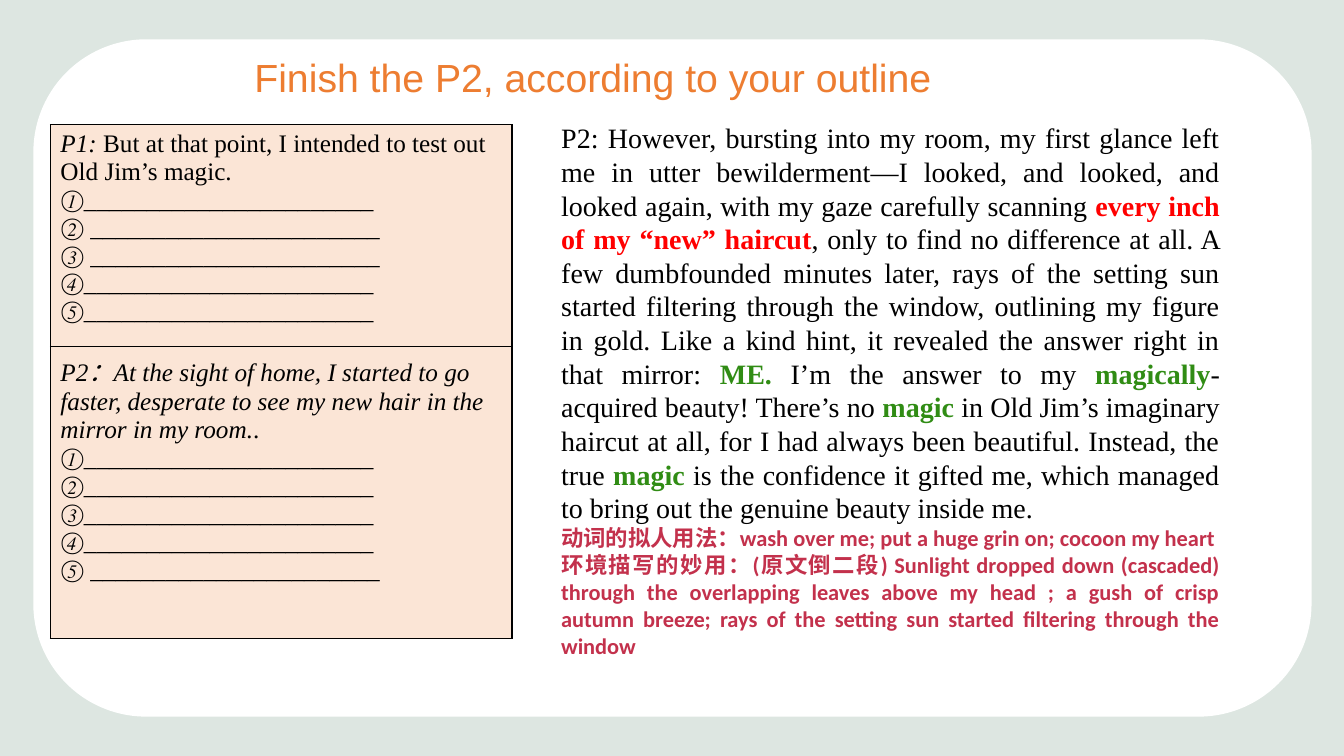
from lxml import etree
from pptx import Presentation
from pptx.dml.color import RGBColor
from pptx.enum import shapes, text
from pptx.oxml import ns
from pptx.util import Pt

PALE_GREEN = RGBColor(0xDD, 0xE6, 0xE1)
WHITE = RGBColor(0xFF, 0xFF, 0xFF)
BLACK = RGBColor(0, 0, 0)
ORANGE = RGBColor(0xED, 0x7D, 0x31)
PEACH = RGBColor(0xFB, 0xE5, 0xD6)
RED = RGBColor(0xFF, 0, 0)
GREEN = RGBColor(0x30, 0x8C, 0x14)
CRIMSON = RGBColor(0xC3, 0x31, 0x4C)
SERIF = "Times New Roman"
BLANK = "_" * 23


def set_font(font, name, size, color):
    font.name = name
    font.size = Pt(size)
    font.color.rgb = color


def add_border(cell):
    """Draw a 1 pt black line on all four sides of a cell."""
    properties = cell._tc.get_or_add_tcPr()
    for index, side in enumerate(("lnL", "lnR", "lnT", "lnB")):
        line = etree.Element(ns.qn(f"a:{side}"), w=str(Pt(1)))
        fill = etree.SubElement(line, ns.qn("a:solidFill"))
        etree.SubElement(fill, ns.qn("a:srgbClr"), val=str(BLACK))
        properties.insert(index, line)


presentation = Presentation()
presentation.slide_width = Pt(960)
presentation.slide_height = Pt(540)
slide = presentation.slides.add_slide(presentation.slide_layouts[5])
slide.background.fill.solid()
slide.background.fill.fore_color.rgb = PALE_GREEN

# White panel
panel = slide.shapes.add_shape(
    shapes.MSO_SHAPE.ROUNDED_RECTANGLE, Pt(23.8), Pt(28.1), Pt(913), Pt(483.8))
panel.shadow.inherit = False
panel.fill.solid()
panel.fill.fore_color.rgb = WHITE
panel.line.fill.background()

# Title, in front of the panel
title = slide.shapes.title
slide.shapes._spTree.append(title._element)
title.left, title.top, title.width, title.height = Pt(23.8), Pt(33.8), Pt(799.2), Pt(42.5)
title.text_frame.text = "Finish the P2, according to your outline"
title.text_frame.vertical_anchor = text.MSO_ANCHOR.MIDDLE
title_paragraph = title.text_frame.paragraphs[0]
title_paragraph.alignment = text.PP_ALIGN.CENTER
set_font(title_paragraph.font, "Arial", 28, ORANGE)

# Outline table: (opening runs as (text, italic), numbered marks), row height
outline = [
    ([("P1: ", True),
      ("But at that point, I intended to test out Old Jim’s magic.", False)],
     ["①", "② ", "③ ", "④", "⑤"], 158.5),
    ([("P2：At the sight of home, I started to go faster, desperate to see "
       "my new hair in the mirror in my room.", True), (".", False)],
     ["①", "②", "③", "④", "⑤ "], 208.5),
]
table = slide.shapes.add_table(2, 1, Pt(36), Pt(89.2), Pt(329.8), Pt(367)).table
table.first_row = False
table.horz_banding = False
for row, (opening, marks, height) in zip(table.rows, outline):
    row.height = Pt(height)
    cell = row.cells[0]
    cell.fill.solid()
    cell.fill.fore_color.rgb = PEACH
    add_border(cell)
    paragraph = cell.text_frame.paragraphs[0]
    set_font(paragraph.font, SERIF, 18, BLACK)
    for words, italic in opening:
        run = paragraph.add_run()
        run.text = words
        set_font(run.font, SERIF, 18, BLACK)
        run.font.italic = italic
    for mark in marks:
        paragraph = cell.text_frame.add_paragraph()
        paragraph.text = mark + BLANK
        set_font(paragraph.font, SERIF, 18, BLACK)
        paragraph.font.italic = True

# Sample paragraph and language notes
sample = [
    ("P2: However, bursting into my room, my first glance left me in utter "
     "bewilderment—I looked, and looked, and looked again, with my gaze "
     "carefully scanning ", BLACK),
    ("every inch of my “new” haircut", RED),
    (", only to find no difference at all. A few dumbfounded minutes later, "
     "rays of the setting sun started filtering through the window, outlining "
     "my figure in gold. Like a kind hint, it revealed the answer right in "
     "that mirror: ", BLACK),
    ("ME. ", GREEN),
    ("I’m the answer to my ", BLACK),
    ("magically", GREEN),
    ("-acquired beauty! There’s no ", BLACK),
    ("magic ", GREEN),
    ("in Old Jim’s imaginary haircut at all, for I had always been beautiful. "
     "Instead, the true ", BLACK),
    ("magic ", GREEN),
    ("is the confidence it gifted me, which managed to bring out the genuine "
     "beauty inside me.", BLACK),
]
notes = [
    "动词的拟人用法：wash over me; put a huge grin on; cocoon my heart",
    "环境描写的妙用：(原文倒二段) Sunlight dropped down (cascaded) through the "
    "overlapping leaves above my head ; a gush of crisp autumn breeze; rays of "
    "the setting sun started filtering through the window",
]
essay = slide.shapes.add_textbox(Pt(393.8), Pt(82.8), Pt(484.6), Pt(395.3))
essay.fill.solid()
essay.fill.fore_color.rgb = WHITE
essay.line.color.rgb = WHITE
essay.line.width = Pt(1)
frame = essay.text_frame
frame.word_wrap = True
paragraph = frame.paragraphs[0]
paragraph.alignment = text.PP_ALIGN.JUSTIFY
paragraph.line_spacing = Pt(24)
for words, color in sample:
    run = paragraph.add_run()
    run.text = words
    set_font(run.font, SERIF, 20, color)
    run.font.bold = color != BLACK
for note in notes:
    paragraph = frame.add_paragraph()
    paragraph.text = note
    paragraph.alignment = text.PP_ALIGN.JUSTIFY
    paragraph.line_spacing = Pt(19.2)
    set_font(paragraph.font, "Calibri", 16, CRIMSON)
    paragraph.font.bold = True

presentation.save("out.pptx")
